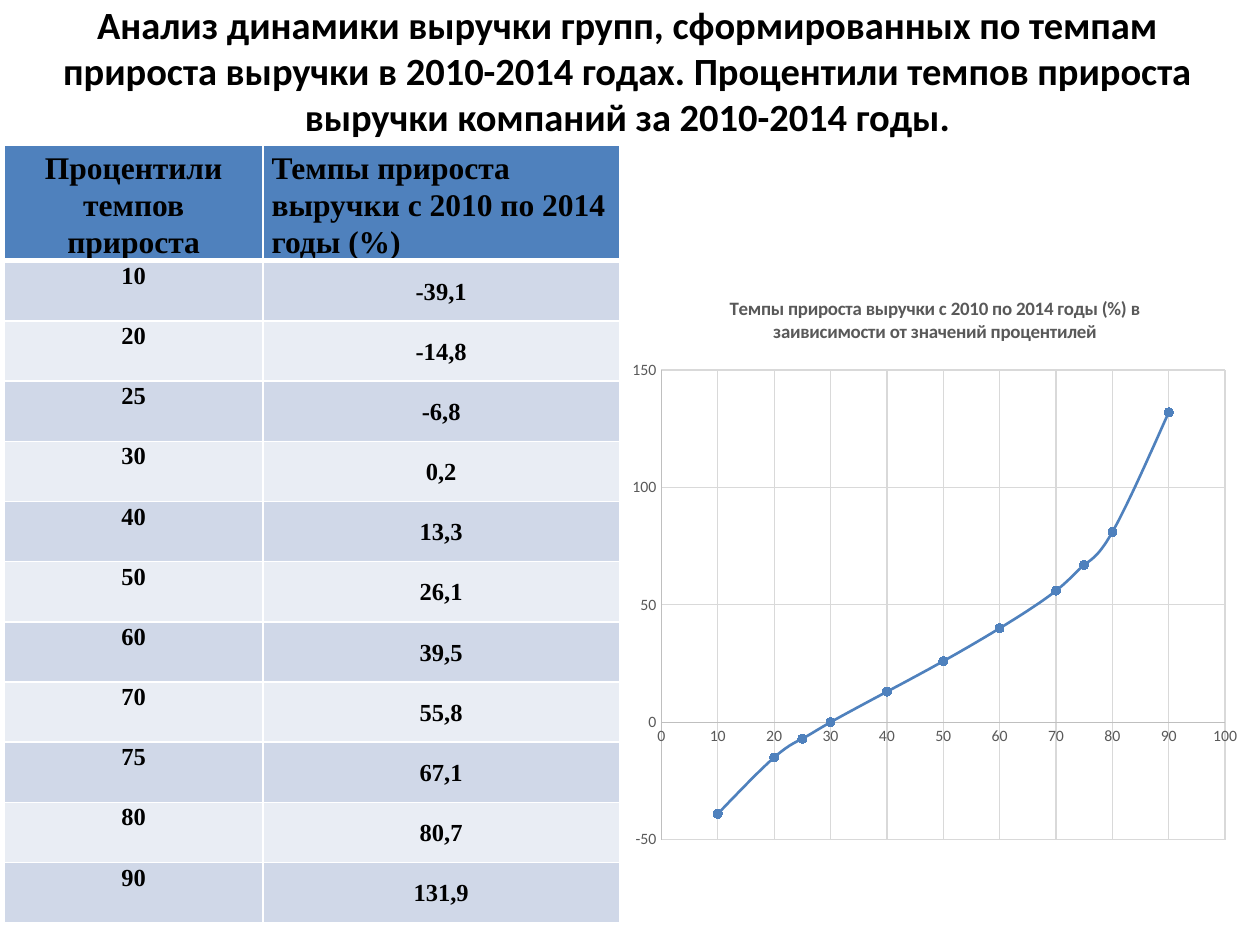
import pptx
import pptx.chart.data
import pptx.dml.color
import pptx.enum.chart
import pptx.enum.text
import pptx.oxml
import pptx.oxml.ns
import pptx.util

Pt = pptx.util.Pt
ALIGN = pptx.enum.text.PP_ALIGN
ANCHOR = pptx.enum.text.MSO_ANCHOR


def color(hex_string):
    return pptx.dml.color.RGBColor.from_string(hex_string)


def apply_format(target, values, hex_string=None):
    for attribute, value in values.items():
        setattr(target, attribute, value)
    if hex_string:
        target.color.rgb = color(hex_string)


percentiles = [10, 20, 25, 30, 40, 50, 60, 70, 75, 80, 90]
growth_rates = [-39.1, -14.8, -6.8, 0.2, 13.3, 26.1, 39.5, 55.8, 67.1, 80.7, 131.9]

presentation = pptx.Presentation()
apply_format(presentation, {"slide_width": Pt(720), "slide_height": Pt(540)})
slide = presentation.slides.add_slide(presentation.slide_layouts[5])

heading = slide.shapes.title
apply_format(heading, {"left": Pt(2.9), "top": Pt(0), "width": Pt(711.4), "height": Pt(109.4)})
heading.text_frame.text = (
    "Анализ динамики выручки групп, сформированных по темпам прироста выручки "
    "в 2010-2014 годах. Процентили темпов прироста выручки компаний за 2010-2014 годы.\v"
)
apply_format(heading.text_frame, {"word_wrap": True, "vertical_anchor": ANCHOR.MIDDLE,
                                  "margin_top": Pt(2.1), "margin_bottom": Pt(5),
                                  "auto_size": pptx.enum.text.MSO_AUTO_SIZE.NONE})
heading_paragraph = heading.text_frame.paragraphs[0]
heading_paragraph.alignment = ALIGN.CENTER
heading_format = {"name": "Calibri", "size": Pt(22), "bold": True}
apply_format(heading_paragraph.font, heading_format, "000000")
for run in heading_paragraph.runs:
    apply_format(run.font, heading_format, "000000")

rows = [("Процентили темпов прироста", "Темпы прироста выручки с 2010 по 2014 годы (%)")]
rows += [(str(percentile), f"{rate:.1f}".replace(".", ","))
         for percentile, rate in zip(percentiles, growth_rates)]
growth_table = slide.shapes.add_table(
    len(rows), 2, Pt(2.6), Pt(82.8), Pt(351.4), Pt(444.6)).table
for column, width in zip(growth_table.columns, (147.6, 203.8)):
    column.width = Pt(width)

for row_index, texts in enumerate(rows):
    is_header = row_index == 0
    growth_table.rows[row_index].height = Pt(66.2 if is_header else 34.4)
    band = "4F81BD" if is_header else ("E9EDF4", "D0D8E8")[row_index % 2]
    for column_index, text in enumerate(texts):
        cell = growth_table.cell(row_index, column_index)
        cell.text = text
        anchor = ANCHOR.BOTTOM if is_header else (ANCHOR.TOP, ANCHOR.MIDDLE)[column_index]
        apply_format(cell, {"margin_left": Pt(5), "margin_right": Pt(5), "margin_top": 0,
                            "margin_bottom": 0, "vertical_anchor": anchor})
        left_aligned = is_header and column_index == 1
        paragraph = cell.text_frame.paragraphs[0]
        apply_format(paragraph, {"alignment": ALIGN.LEFT if left_aligned else ALIGN.CENTER,
                                 "line_spacing": 1.07})
        apply_format(paragraph.runs[0].font,
                     {"name": "Times New Roman", "size": Pt(18 if is_header else 14),
                      "bold": True}, "000000")
        cell_properties = cell._tc.get_or_add_tcPr()
        for side in "LRTB":
            thick = (is_header and side == "B") or (row_index == 1 and side == "T")
            cell_properties.append(pptx.oxml.parse_xml(
                f'<a:ln{side} {pptx.oxml.ns.nsdecls("a")} w="{Pt(3 if thick else 1)}">'
                '<a:solidFill><a:srgbClr val="FFFFFF"/></a:solidFill>'
                f'</a:ln{side}>'))
        cell.fill.solid()
        cell.fill.fore_color.rgb = color(band)

chart_data = pptx.chart.data.XyChartData()
growth_points = chart_data.add_series("Series 1")
for percentile, rate in zip(percentiles, growth_rates):
    growth_points.add_data_point(percentile, round(rate))
growth_chart = slide.shapes.add_chart(
    pptx.enum.chart.XL_CHART_TYPE.XY_SCATTER_SMOOTH,
    Pt(354.2), Pt(157), Pt(360), Pt(334.8), chart_data).chart
apply_format(growth_chart, {"has_legend": False, "has_title": True})
apply_format(growth_chart.font, {"name": "Calibri", "size": Pt(10)}, "000000")
growth_chart.plots[0].vary_by_categories = False

chart_title = growth_chart.chart_title
chart_title.include_in_layout = False
chart_title.text_frame.text = (
    "Темпы прироста выручки с 2010 по 2014 годы (%) в заивисимости от значений процентилей")
apply_format(chart_title.text_frame.paragraphs[0].runs[0].font,
             {"name": "Calibri", "size": Pt(10.8), "bold": True}, "595959")

for axis, low, high, step in ((growth_chart.category_axis, 0, 100, 10),
                              (growth_chart.value_axis, -50, 150, 50)):
    apply_format(axis, {"minimum_scale": low, "maximum_scale": high, "major_unit": step,
                        "has_major_gridlines": True,
                        "major_tick_mark": pptx.enum.chart.XL_TICK_MARK.NONE,
                        "minor_tick_mark": pptx.enum.chart.XL_TICK_MARK.NONE,
                        "tick_label_position": pptx.enum.chart.XL_TICK_LABEL_POSITION.NEXT_TO_AXIS})
    apply_format(axis.tick_labels, {"number_format": "General", "number_format_is_linked": False})
    apply_format(axis.tick_labels.font, {"name": "Calibri", "size": Pt(9)}, "595959")
    apply_format(axis.format.line, {"width": Pt(0.75)}, "BFBFBF")
    apply_format(axis.major_gridlines.format.line, {"width": Pt(0.75)}, "D9D9D9")

growth_curve = growth_chart.plots[0].series[0]
growth_curve._element.get_or_add_smooth().val = True
apply_format(growth_curve.format.line, {"width": Pt(1.5)}, "4F81BD")
apply_format(growth_curve.marker, {"style": pptx.enum.chart.XL_MARKER_STYLE.CIRCLE, "size": 5})
growth_curve.marker.format.fill.solid()
growth_curve.marker.format.fill.fore_color.rgb = color("4F81BD")
growth_curve.marker.format.line.color.rgb = color("4F81BD")

presentation.save("out.pptx")
